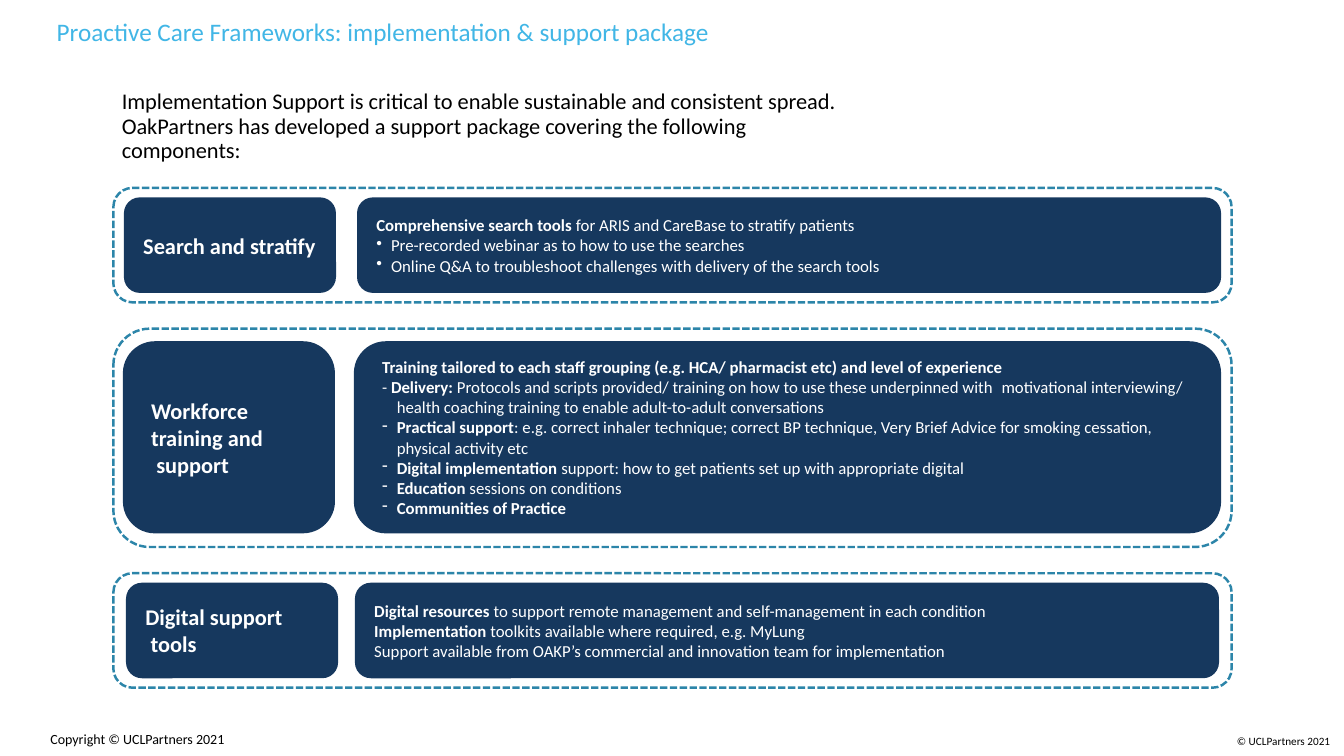
from copy import deepcopy
from dataclasses import dataclass

from lxml import etree
from pptx import Presentation, util as u
from pptx.dml.color import RGBColor
from pptx.enum import dml, shapes, text
from pptx.oxml.ns import qn


@dataclass(frozen=True)
class Theme:
    font: str = "Calibri"
    navy: str = "16385E"
    teal: str = "2C85A9"
    sky: str = "41B6E6"
    black: str = "000000"
    white: str = "FFFFFF"
    title: int = 18
    head: int = 16
    body: int = 12
    foot: int = 10
    small: int = 8
    dash: float = 1.75


@dataclass(frozen=True)
class Para:
    """Text with *bold* parts, hanging by a given depth."""
    words: str
    left: int = 0
    hang: int = 0
    mark: str = ""
    tab: int = 0


def px(n):
    return u.Emu(n * 9525)


class Deck:
    def __init__(self, theme):
        self.theme = theme
        self.show = Presentation()
        self.show.slide_width, self.show.slide_height = px(1280), px(720)
        self.slide = self.show.slides.add_slide(self.show.slide_layouts[6])

    def panel(self, x, y, w, h):
        box = self.slide.shapes.add_shape(
            shapes.MSO_SHAPE.ROUNDED_RECTANGLE, px(x), px(y), px(w), px(h))
        box.shadow.inherit = False
        return box

    def frame(self, *place):
        box = self.panel(*place)
        box.fill.background()
        box.line.color.rgb = RGBColor.from_string(self.theme.teal)
        box.line.width = u.Pt(self.theme.dash)
        box.line.dash_style = dml.MSO_LINE.SQUARE_DOT

    def card(self, place, paras, size, inset):
        box = self.panel(*place)
        box.fill.solid()
        box.fill.fore_color.rgb = RGBColor.from_string(self.theme.navy)
        box.line.fill.background()
        box.text_frame.vertical_anchor = text.MSO_ANCHOR.MIDDLE
        self.set_text(box, paras, size, self.theme.white, inset)

    def note(self, place, words, size, color, wrap=True, lead=None):
        box = self.slide.shapes.add_textbox(*map(px, place))
        self.set_text(box, [Para(words)], size, color, 0, wrap, lead)

    def set_text(self, box, paras, size, color, inset, wrap=True, lead=None):
        frame = box.text_frame
        frame.word_wrap = wrap
        frame.margin_left = px(inset)
        frame.margin_top = frame.margin_right = frame.margin_bottom = 0
        for i, item in enumerate(paras):
            para = frame.add_paragraph() if i else frame.paragraphs[0]
            self.indent(para, item)
            para.alignment = text.PP_ALIGN.LEFT
            if lead:
                para.line_spacing = u.Pt(lead)
            self.add_runs(para, item.words, size, color)

    def indent(self, para, item):
        props = para._p.get_or_add_pPr()
        props.set("marL", str(px(item.left + item.hang)))
        props.set("indent", str(px(-item.hang)))
        if item.mark:
            etree.SubElement(props, qn("a:buChar"), char=item.mark)
        if item.tab:
            tabs = etree.SubElement(props, qn("a:tabLst"))
            etree.SubElement(tabs, qn("a:tab"), pos=str(px(item.tab)), algn="l")

    def add_runs(self, para, words, size, color):
        for i, part in enumerate(words.split("*")):
            for j, line in enumerate(part.split("\v")):
                if j:
                    para.add_line_break()
                if not line:
                    continue
                run = para.add_run()
                run.text = line
                run.font.name = self.theme.font
                run.font.size = u.Pt(size)
                run.font.bold = i % 2 == 1
                run.font.color.rgb = RGBColor.from_string(color)
        # Line breaks take the type size of the text around them.
        for gap in para._p.findall(qn("a:br")):
            gap.append(deepcopy(para._p.find(qn("a:r")).find(qn("a:rPr"))))


def bullet(words, mark="-"):
    return Para(words, hang=14, mark=mark)


SEARCH = [
    Para("*Comprehensive search tools* for ARIS and CareBase to stratify patients"),
    bullet("Pre-recorded webinar as to how to use the searches", "•"),
    bullet("Online Q&A to troubleshoot challenges with delivery of the search tools", "•"),
]
TRAINING = [
    Para("*Training tailored to each staff grouping (e.g. HCA/ pharmacist etc) "
         "and level of experience*"),
    Para("- *Delivery:* Protocols and scripts provided/ training on how to use these "
         "underpinned with\tmotivational interviewing/\vhealth coaching training to "
         "enable adult-to-adult conversations", hang=14, tab=609),
    bullet("*Practical support*: e.g. correct inhaler technique; correct BP technique, "
           "Very Brief Advice for smoking cessation,\vphysical activity etc"),
    bullet("*Digital implementation* support: how to get patients set up with "
           "appropriate digital"),
    bullet("*Education* sessions on conditions"),
    bullet("*Communities of Practice*"),
]
DIGITAL = [
    Para("*Digital resources* to support remote management and self-management "
         "in each condition"),
    Para("*Implementation* toolkits available where required, e.g. MyLung"),
    Para("Support available from OAKP’s commercial and innovation team for implementation"),
]
# Frame top and height, card top and height, label left, body left and width,
# inset, label lines, body text
ROWS = [
    (179, 109, 188, 91, 118, 340, 823, 14, ["Search and stratify"], SEARCH),
    (313, 208, 325, 183, 117, 337, 826, 18,
     ["Workforce", "training and", "support"], TRAINING),
    (546, 109, 555, 91, 120, 338, 823, 14, ["Digital support", "tools"], DIGITAL),
]


def main():
    theme = Theme()
    deck = Deck(theme)
    deck.note((54, 16, 997, 58),
              "Proactive Care Frameworks: implementation & support package",
              theme.title, theme.sky)
    deck.note((116, 86, 696, 70),
              "Implementation Support is critical to enable sustainable and consistent "
              "spread.\vOakPartners has developed a support package covering the "
              "following\vcomponents:", theme.head, theme.black, lead=17.3)
    for top, high, y, h, left, x, w, inset, lines, body in ROWS:
        deck.frame(108, top, 1065, high)
        label = [Para(f"*{line}*", left=5 if 0 < i == len(lines) - 1 else 0)
                 for i, line in enumerate(lines)]
        deck.card((left, y, 202, h), label, theme.head, inset)
        deck.card((x, y, w, h), body, theme.body, inset)
    deck.note((48, 696, 178, 20), "Copyright © UCLPartners 2021",
              theme.foot, theme.black, wrap=False)
    deck.note((1178, 699, 91, 15), "© UCLPartners 2021",
              theme.small, theme.black, wrap=False)
    deck.show.save("out.pptx")


if __name__ == "__main__":
    main()
